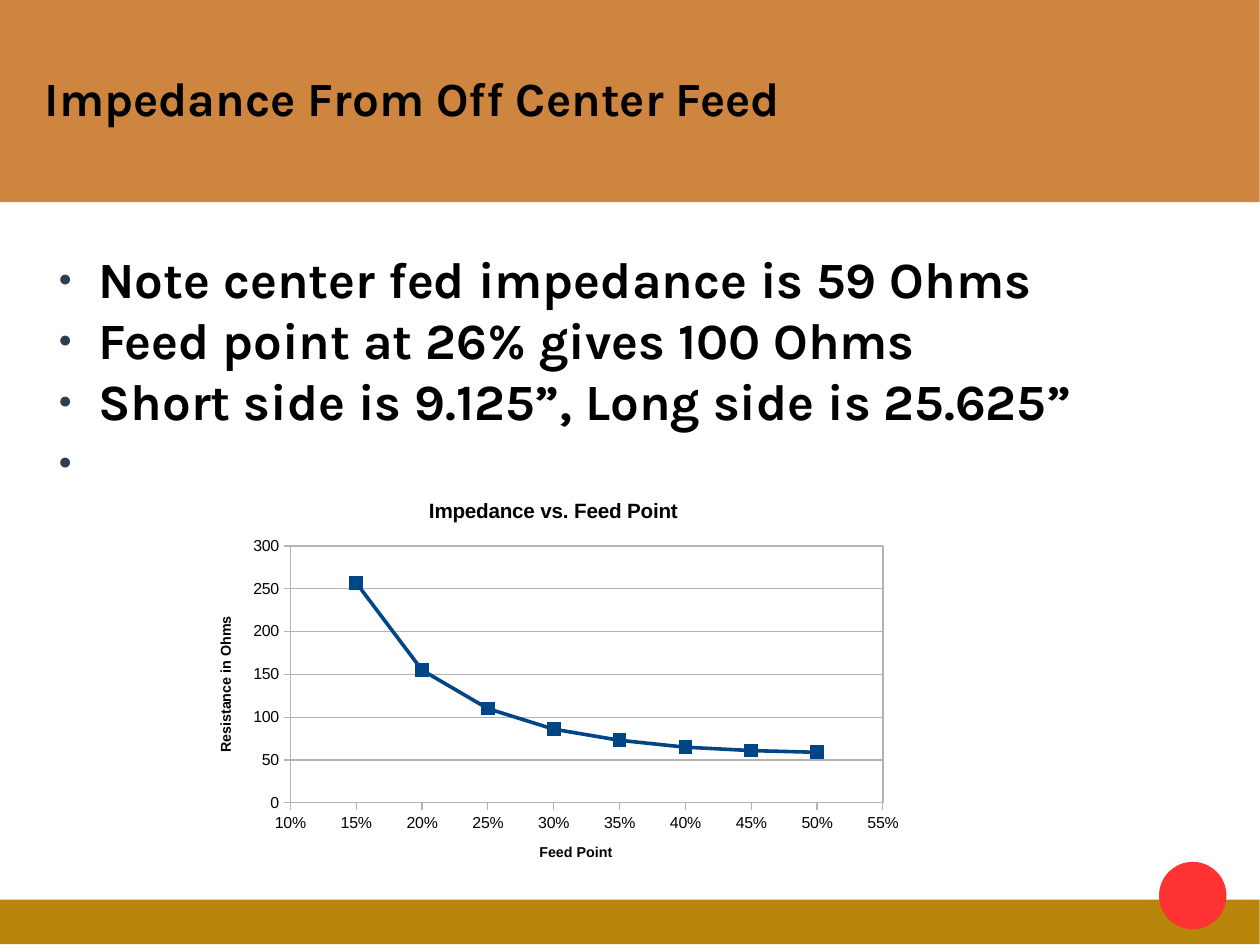
import pptx
import pptx.chart.data
import pptx.dml.color
import pptx.enum.chart
import pptx.enum.shapes
import pptx.enum.text
import pptx.oxml
import pptx.oxml.ns
import pptx.util
from pptx.util import Inches

BLACK = pptx.dml.color.RGBColor(0x00, 0x00, 0x00)
WHITE = pptx.dml.color.RGBColor(0xFF, 0xFF, 0xFF)
GOLD = pptx.dml.color.RGBColor(0xB8, 0x86, 0x0A)
COPPER = pptx.dml.color.RGBColor(0xCD, 0x85, 0x3F)
RED = pptx.dml.color.RGBColor(0xFF, 0x33, 0x33)
GRAY = pptx.dml.color.RGBColor(0xB3, 0xB3, 0xB3)
NAVY = pptx.dml.color.RGBColor(0x00, 0x45, 0x86)
BULLET_COLOR = pptx.dml.color.RGBColor(0x2C, 0x3E, 0x50)


def style_font(font, name, size, bold):
    font.name = name
    font.size = pptx.util.Pt(size)
    font.bold = bold
    font.color.rgb = BLACK


def prepare_frame(frame, anchor):
    frame.word_wrap = True
    frame.auto_size = pptx.enum.text.MSO_AUTO_SIZE.NONE
    frame.vertical_anchor = anchor
    frame.margin_left = frame.margin_right = 0
    frame.margin_top = frame.margin_bottom = 0


# Slide of 28 by 21 centimetres
presentation = pptx.Presentation()
presentation.slide_width = Inches(28 / 2.54)
presentation.slide_height = Inches(21 / 2.54)
slide = presentation.slides.add_slide(presentation.slide_layouts[5])

# Footer bar, title band and red dot
RECTANGLE = pptx.enum.shapes.MSO_SHAPE.RECTANGLE
OVAL = pptx.enum.shapes.MSO_SHAPE.OVAL
for kind, left, top, width, height, color in [
    (RECTANGLE, 0, 7.87, 11.02, 0.39, GOLD),
    (RECTANGLE, 0, 0, 11.02, 1.77, COPPER),
    (OVAL, 10.14, 7.54, 0.59, 0.59, RED),
]:
    shape = slide.shapes.add_shape(
        kind, Inches(left), Inches(top), Inches(width), Inches(height))
    shape.shadow.inherit = False
    shape.fill.solid()
    shape.fill.fore_color.rgb = color
    shape.line.fill.background()

# Title, brought in front of its band
title = slide.shapes.title
title.left, title.top = Inches(0.39), Inches(0.33)
title.width, title.height = Inches(10.24), Inches(1.05)
slide.shapes._spTree.append(title._element)
prepare_frame(title.text_frame, pptx.enum.text.MSO_ANCHOR.MIDDLE)
paragraph = title.text_frame.paragraphs[0]
paragraph.alignment = pptx.enum.text.PP_ALIGN.LEFT
run = paragraph.add_run()
run.text = "Impedance From Off Center Feed"
style_font(run.font, "Karla", 30, True)

# Bulleted notes; the last bullet stands alone
notes_box = slide.shapes.add_textbox(
    Inches(0.39), Inches(2.17), Inches(10.24), Inches(5.51))
frame = notes_box.text_frame
prepare_frame(frame, pptx.enum.text.MSO_ANCHOR.TOP)
for index, text in enumerate([
    "Note center fed impedance is 59 Ohms",
    "Feed point at 26% gives 100 Ohms",
    "Short side is 9.125”, Long side is 25.625”",
    " ",
]):
    paragraph = frame.paragraphs[0] if index == 0 else frame.add_paragraph()
    run = paragraph.add_run()
    run.text = text
    style_font(run.font, "Karla", 32, True)
    properties = paragraph._p.get_or_add_pPr()
    properties.set("marL", str(Inches(0.47)))
    properties.set("indent", str(Inches(-0.35)))
    namespace = pptx.oxml.ns.nsdecls("a")
    for bullet in [
        f'<a:buClr {namespace}><a:srgbClr val="{BULLET_COLOR}"/></a:buClr>',
        f'<a:buSzPct {namespace} val="45000"/>',
        f'<a:buFont {namespace} typeface="Arial"/>',
        f'<a:buChar {namespace} char="●"/>',
    ]:
        properties.append(pptx.oxml.parse_xml(bullet))

# Impedance chart
chart_data = pptx.chart.data.XyChartData()
impedance = chart_data.add_series("Series 1")
for feed_point, ohms in zip(
        [0.5, 0.45, 0.4, 0.35, 0.3, 0.25, 0.2, 0.15],
        [59, 61, 65, 73, 86, 110, 155, 257]):
    impedance.add_data_point(feed_point, ohms)
chart = slide.shapes.add_chart(
    pptx.enum.chart.XL_CHART_TYPE.XY_SCATTER_LINES,
    Inches(1.69), Inches(4.2), Inches(6.3), Inches(3.54), chart_data).chart
style_font(chart.font, "Arial", 10, False)
chart.has_legend = False
chart.has_title = True
run = chart.chart_title.text_frame.paragraphs[0].add_run()
run.text = "Impedance vs. Feed Point"
style_font(run.font, "Arial", 13, True)

# Line and markers
plot = chart.plots[0]
plot.vary_by_categories = False
series = plot.series[0]
series.smooth = False
series.format.line.color.rgb = NAVY
series.format.line.width = pptx.util.Pt(2.27)
series.marker.style = pptx.enum.chart.XL_MARKER_STYLE.SQUARE
series.marker.size = 8
series.marker.format.fill.solid()
series.marker.format.fill.fore_color.rgb = NAVY
series.marker.format.line.color.rgb = NAVY

# Axes
for axis, caption, low, high, step, number_format in [
    (chart.category_axis, "Feed Point", 0.1, 0.55, 0.05, "0%"),
    (chart.value_axis, "Resistance in Ohms", 0, 300, 50, "General"),
]:
    axis.minimum_scale, axis.maximum_scale = low, high
    axis.major_unit = step
    axis.major_tick_mark = pptx.enum.chart.XL_TICK_MARK.OUTSIDE
    axis.minor_tick_mark = pptx.enum.chart.XL_TICK_MARK.NONE
    axis.tick_label_position = pptx.enum.chart.XL_TICK_LABEL_POSITION.LOW
    axis.tick_labels.number_format = number_format
    axis.tick_labels.number_format_is_linked = False
    style_font(axis.tick_labels.font, "Arial", 10, False)
    axis.format.line.color.rgb = GRAY
    axis.format.line.width = pptx.util.Pt(0.75)
    axis.has_title = True
    run = axis.axis_title.text_frame.paragraphs[0].add_run()
    run.text = caption
    style_font(run.font, "Arial", 9, True)
chart.category_axis.has_major_gridlines = False
chart.value_axis.has_major_gridlines = True
grid_line = chart.value_axis.major_gridlines.format.line
grid_line.color.rgb = GRAY
grid_line.width = pptx.util.Pt(0.75)

# Plot area position and frame, white chart background
namespace = pptx.oxml.ns.nsdecls("c", "a")
plot_area = chart._chartSpace.chart.plotArea
for layout in plot_area.findall(pptx.oxml.ns.qn("c:layout")):
    plot_area.remove(layout)
plot_area.insert(0, pptx.oxml.parse_xml(
    f'<c:layout {namespace}><c:manualLayout><c:layoutTarget val="inner"/>'
    '<c:xMode val="edge"/><c:yMode val="edge"/><c:x val="0.135"/>'
    '<c:y val="0.163"/><c:w val="0.823"/><c:h val="0.635"/>'
    '</c:manualLayout></c:layout>'))
plot_area.append(pptx.oxml.parse_xml(
    f'<c:spPr {namespace}><a:noFill/><a:ln w="9525"><a:solidFill>'
    f'<a:srgbClr val="{GRAY}"/></a:solidFill></a:ln></c:spPr>'))
chart._chartSpace.chart.addnext(pptx.oxml.parse_xml(
    f'<c:spPr {namespace}><a:solidFill><a:srgbClr val="{WHITE}"/>'
    '</a:solidFill><a:ln><a:noFill/></a:ln></c:spPr>'))

presentation.save("out.pptx")
